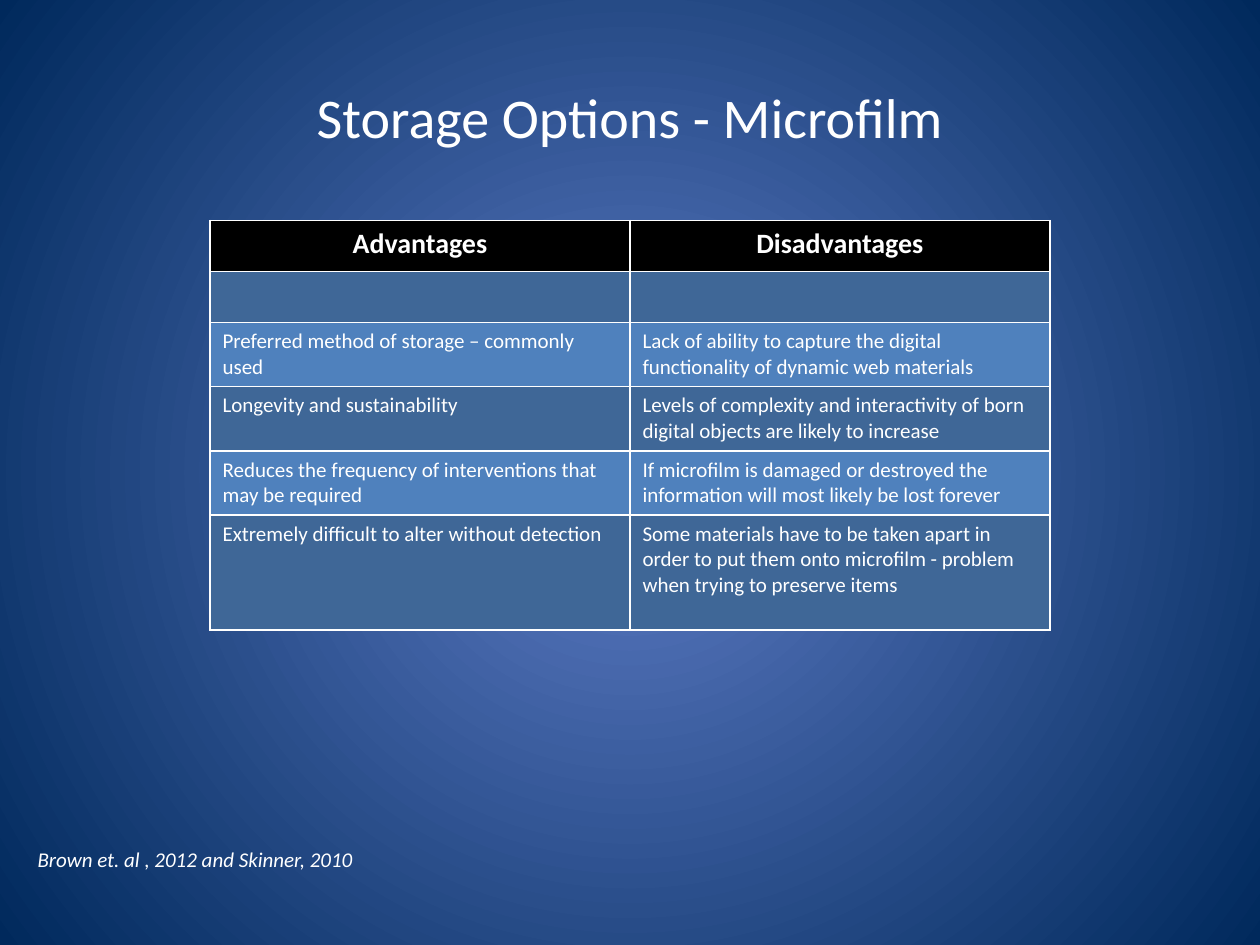
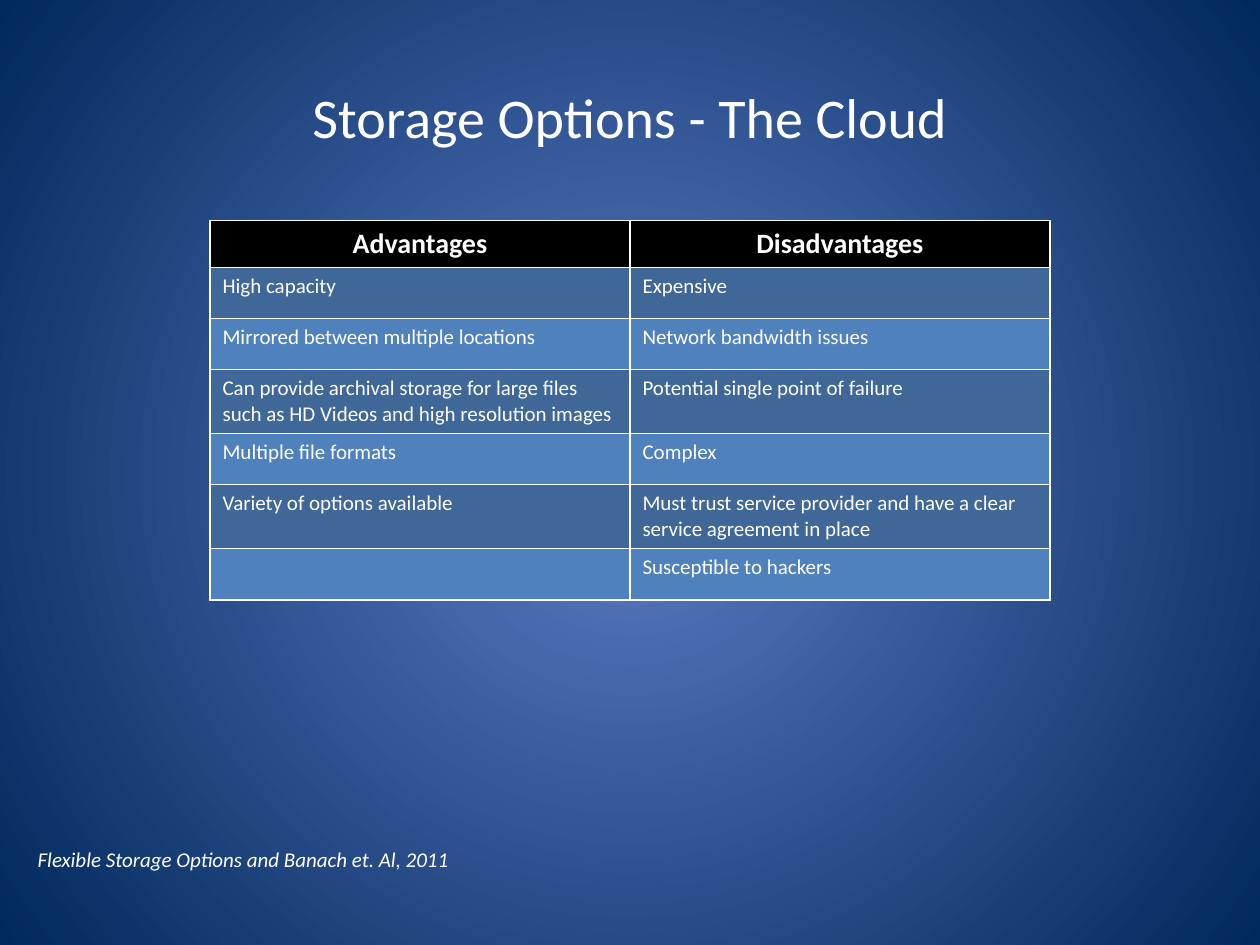
from dataclasses import dataclass

import pptx
import pptx.dml.color
import pptx.enum.text
import pptx.oxml
import pptx.oxml.ns
import pptx.presentation
import pptx.slide
import pptx.table
import pptx.text.text
import pptx.util
from pptx.util import Pt

COLORS = {
    "text": "FFFFFF",
    "border": "FFFFFF",
    "header": "000000",
    "dark_band": "3F6797",
    "light_band": "4F81BD",
    "glow": "5E7CC5",
    "edge": "00295C",
}
FONT = "Calibri"
HEADINGS = ("Advantages", "Disadvantages")
ROW_HEIGHT = 29.2
TWO_LINE_HEIGHT = 36.6
COLUMN_WIDTH = 240
CENTER = pptx.enum.text.PP_ALIGN.CENTER
LEFT = pptx.enum.text.PP_ALIGN.LEFT
MIDDLE = pptx.enum.text.MSO_ANCHOR.MIDDLE
TOP = pptx.enum.text.MSO_ANCHOR.TOP


@dataclass(frozen=True)
class Comparison:
    advantage: str
    disadvantage: str
    height: float = ROW_HEIGHT


@dataclass(frozen=True)
class StorageOption:
    title: str
    header_height: float
    comparisons: tuple[Comparison, ...]
    citation: str
    citation_width: float


@dataclass(frozen=True)
class TextStyle:
    size: float
    bold: bool = False
    italic: bool = False
    align: pptx.enum.text.PP_ALIGN = LEFT


TITLE = TextStyle(32, align=CENTER)
HEADING = TextStyle(16, bold=True, align=CENTER)
BODY = TextStyle(12)
CITATION = TextStyle(12, italic=True)

OPTIONS = (
    StorageOption(
        "Storage Options - Microfilm",
        ROW_HEIGHT,
        (
            Comparison("", ""),
            Comparison(
                "Preferred method of storage – commonly used",
                "Lack of ability to capture the digital functionality of dynamic web materials",
                TWO_LINE_HEIGHT,
            ),
            Comparison(
                "Longevity and sustainability",
                "Levels of complexity and interactivity of born digital objects are likely to increase",
                TWO_LINE_HEIGHT,
            ),
            Comparison(
                "Reduces the frequency of interventions that may be required",
                "If microfilm is damaged or destroyed the information will most likely be lost forever",
                TWO_LINE_HEIGHT,
            ),
            Comparison(
                "Extremely difficult to alter without detection",
                "Some materials have to be taken apart in order to put them onto microfilm"
                " - problem when trying to preserve items",
                65.8,
            ),
        ),
        "Brown et. al , 2012 and Skinner, 2010",
        196,
    ),
    StorageOption(
        "Storage Options - The Cloud",
        26.8,
        (
            Comparison("High capacity", "Expensive"),
            Comparison("Mirrored between multiple locations", "Network bandwidth issues"),
            Comparison(
                "Can provide archival storage for large files such as HD Videos and high resolution images",
                "Potential single point of failure",
                TWO_LINE_HEIGHT,
            ),
            Comparison("Multiple file formats", "Complex"),
            Comparison(
                "Variety of options available",
                "Must trust service provider and have a clear service agreement in place",
                TWO_LINE_HEIGHT,
            ),
            Comparison("", "Susceptible to hackers"),
        ),
        "Flexible Storage Options and Banach et. Al, 2011",
        256,
    ),
)


def rgb(name: str) -> pptx.dml.color.RGBColor:
    return pptx.dml.color.RGBColor.from_string(COLORS[name])


def write(frame: pptx.text.text.TextFrame, text: str, style: TextStyle) -> None:
    paragraph = frame.paragraphs[0]
    paragraph.text = text
    paragraph.alignment = style.align
    paragraph.font.name = FONT
    paragraph.font.size = Pt(style.size)
    paragraph.font.bold = style.bold
    paragraph.font.italic = style.italic
    paragraph.font.color.rgb = rgb("text")


def add_text(
    slide: pptx.slide.Slide,
    box: tuple[float, float, float, float],
    text: str,
    style: TextStyle,
    anchor: pptx.enum.text.MSO_ANCHOR = TOP,
) -> None:
    frame = slide.shapes.add_textbox(*map(Pt, box)).text_frame
    frame.word_wrap = True
    frame.vertical_anchor = anchor
    write(frame, text, style)


def paint_background(deck: pptx.presentation.Presentation) -> None:
    master = deck.slide_master
    fill = master.background.fill
    fill.gradient()
    for stop, name in zip(fill.gradient_stops, ("glow", "edge")):
        stop.color.rgb = rgb(name)
    linear = master.element.xpath("p:cSld/p:bg//a:lin")[0]
    circle = pptx.oxml.parse_xml(
        f'<a:path {pptx.oxml.ns.nsdecls("a")} path="circle">'
        '<a:fillToRect l="50000" t="50000" r="50000" b="50000"/></a:path>'
    )
    linear.getparent().replace(linear, circle)


def style_cell(cell: pptx.table._Cell, text: str, style: TextStyle, band: str) -> None:
    write(cell.text_frame, text, style)
    cell.fill.solid()
    cell.fill.fore_color.rgb = rgb(band)
    properties = cell._tc.get_or_add_tcPr()
    for index, side in enumerate(("lnL", "lnR", "lnT", "lnB")):
        border = pptx.oxml.parse_xml(
            f'<a:{side} {pptx.oxml.ns.nsdecls("a")} w="{Pt(1)}"><a:solidFill>'
            f'<a:srgbClr val="{COLORS["border"]}"/></a:solidFill></a:{side}>'
        )
        properties.insert(index, border)


def add_comparison_table(slide: pptx.slide.Slide, option: StorageOption) -> None:
    rows = (Comparison(*HEADINGS, option.header_height), *option.comparisons)
    height = sum(row.height for row in rows)
    table = slide.shapes.add_table(
        len(rows), len(HEADINGS), Pt(120), Pt(126), Pt(COLUMN_WIDTH * len(HEADINGS)), Pt(height)
    ).table
    for index, row in enumerate(rows):
        table.rows[index].height = Pt(row.height)
        style = BODY if index else HEADING
        band = ("light_band", "dark_band")[index % 2] if index else "header"
        for column, text in enumerate((row.advantage, row.disadvantage)):
            style_cell(table.cell(index, column), text, style, band)


def add_option_slide(deck: pptx.presentation.Presentation, option: StorageOption) -> None:
    slide = deck.slides.add_slide(deck.slide_layouts[6])
    add_text(slide, (36, 21.6, 648, 90), option.title, TITLE, MIDDLE)
    add_comparison_table(slide, option)
    add_text(slide, (14.4, 480, option.citation_width, 21.8), option.citation, CITATION)


def main() -> None:
    deck = pptx.Presentation()
    deck.slide_width, deck.slide_height = Pt(720), Pt(540)
    paint_background(deck)
    for option in OPTIONS:
        add_option_slide(deck, option)
    deck.save("out.pptx")


if __name__ == "__main__":
    main()
